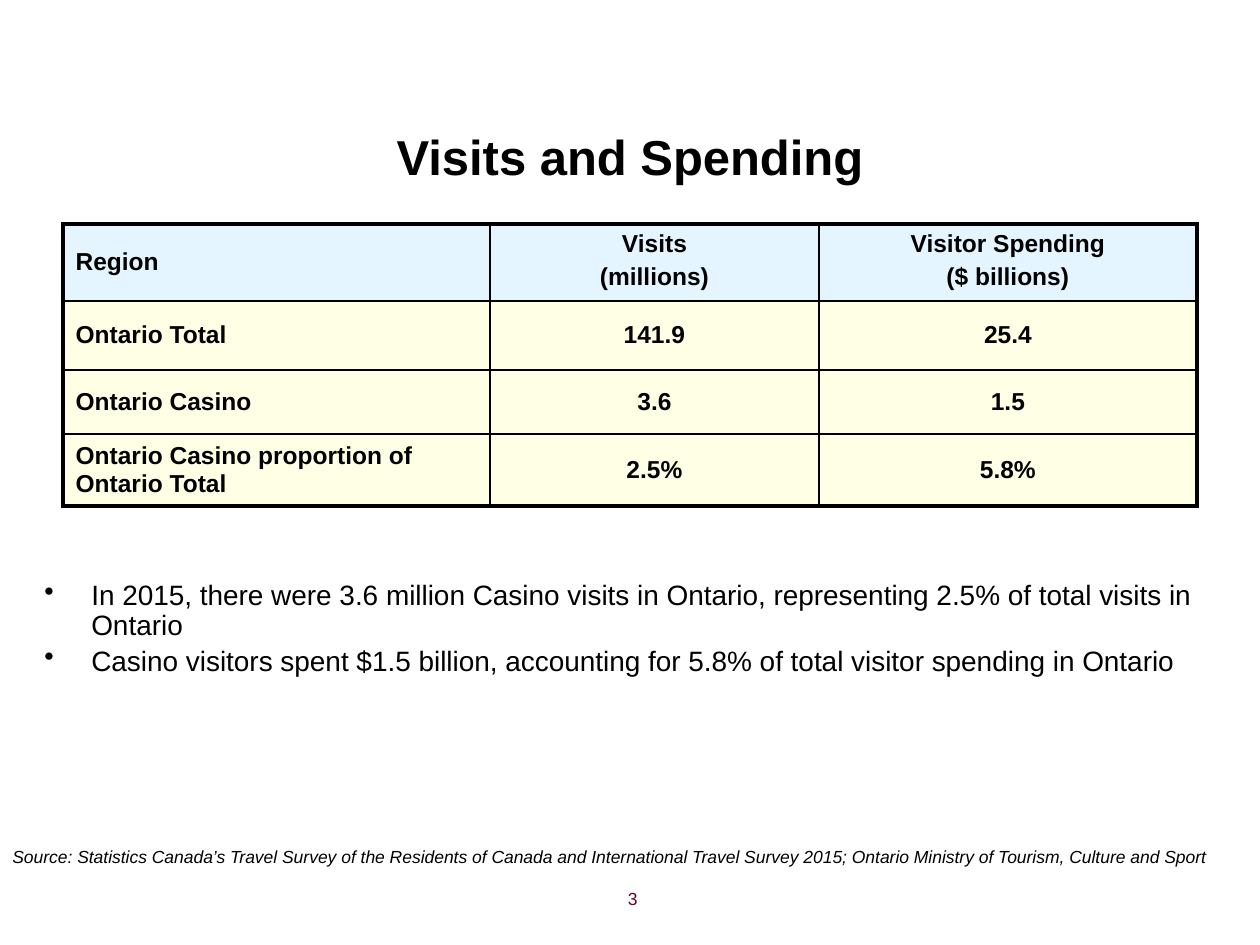
from lxml.etree import SubElement
from pptx import Presentation
from pptx.dml.color import RGBColor
from pptx.enum.text import MSO_ANCHOR, PP_ALIGN
from pptx.oxml import parse_xml
from pptx.oxml.ns import nsdecls, qn
from pptx.util import Pt

PX = 914400 // 126
BLACK = RGBColor(0, 0, 0)
MAROON = RGBColor(0x66, 0x00, 0x33)
HEADER_BLUE = RGBColor(0xCC, 0xEC, 0xFF)
BODY_YELLOW = RGBColor(0xFF, 0xFF, 0xCC)


def write(frame, text, size, color=BLACK, bold=False, italic=False,
          align=PP_ALIGN.LEFT, anchor=MSO_ANCHOR.TOP, gap=0, line=None, bullet=None):
    frame.word_wrap = True
    frame.vertical_anchor = anchor
    for index, words in enumerate(text.split("\n")):
        para = frame.paragraphs[0] if index == 0 else frame.add_paragraph()
        para.alignment = align
        para.space_before = Pt(gap if index else 0)
        if line:
            para.line_spacing = line
        if bullet:
            properties = para._p.get_or_add_pPr()
            properties.set("marL", str(47 * PX))
            properties.set("indent", str(-47 * PX))
            SubElement(properties, qn("a:buChar")).set("char", bullet)
        span = para.add_run()
        span.text = words
        span.font.name = "Arial"
        span.font.size = Pt(size)
        span.font.bold = bold
        span.font.italic = italic
        span.font.color.rgb = color


def paint(cell, color, widths):
    cell.fill.solid()
    cell.fill.fore_color.rgb = color
    properties = cell._tc.get_or_add_tcPr()
    shade = properties.find(".//" + qn("a:srgbClr"))
    SubElement(shade, qn("a:alpha")).set("val", "50000")
    for index, (side, width) in enumerate(zip("LRTB", widths)):
        properties.insert(index, parse_xml(
            f'<a:ln{side} {nsdecls("a")} w="{Pt(width)}"><a:solidFill>'
            f'<a:srgbClr val="{BLACK}"/></a:solidFill></a:ln{side}>'))


deck = Presentation()
deck.slide_width = 1260 * PX
deck.slide_height = 945 * PX
page = deck.slides.add_slide(deck.slide_layouts[5])

title = page.shapes.title
title.left, title.top, title.width, title.height = 63 * PX, 108 * PX, 1134 * PX, 95 * PX
write(title.text_frame, "Visits and Spending", 28, bold=True,
      align=PP_ALIGN.CENTER, anchor=MSO_ANCHOR.MIDDLE)

rows = [
    ("Region", "Visits\n(millions)", "Visitor Spending\n($ billions)"),
    ("Ontario Total", "141.9", "25.4"),
    ("Ontario Casino", "3.6", "1.5"),
    ("Ontario Casino proportion of Ontario Total", "2.5%", "5.8%"),
]
column_widths = [427, 329, 378]
row_heights = [77, 69, 64, 72]
table = page.shapes.add_table(4, 3, 63 * PX, 224 * PX, sum(column_widths) * PX,
                              sum(row_heights) * PX).table
table.horz_banding = False
for column, width in zip(table.columns, column_widths):
    column.width = width * PX
for r, (row, height) in enumerate(zip(rows, row_heights)):
    table.rows[r].height = height * PX
    for c, text in enumerate(row):
        cell = table.cell(r, c)
        is_value = r > 0 and c > 0
        cell.margin_left = cell.margin_right = 0 if is_value else Pt(7.2)
        cell.margin_top = cell.margin_bottom = 0 if is_value else Pt(3.6)
        write(cell.text_frame, text, 14, bold=True, gap=3,
              align=PP_ALIGN.CENTER if c else PP_ALIGN.LEFT)
        cell.vertical_anchor = MSO_ANCHOR.TOP if r == 0 and c else MSO_ANCHOR.MIDDLE
        outer = (c == 0, c == 2, r == 0, r == 3)
        paint(cell, BODY_YELLOW if r else HEADER_BLUE,
              [2.25 if edge else 1 for edge in outer])

findings = (
    "In 2015, there were 3.6 million Casino visits in Ontario, "
    "representing 2.5% of total visits in Ontario\n"
    "Casino visitors spent $1.5 billion, accounting for 5.8% of total "
    "visitor spending in Ontario"
)
source = (
    "Source: Statistics Canada’s Travel Survey of the Residents of Canada and "
    "International Travel Survey 2015; Ontario Ministry of Tourism, Culture and Sport"
)
boxes = [
    ((32, 575, 1197, 233), findings, dict(size=16, gap=3, line=0.9, bullet="•")),
    ((357, 882, 293, 44), "3", dict(size=10, color=MAROON, align=PP_ALIGN.RIGHT)),
    ((0, 840, 1235, 34), source, dict(size=10, italic=True)),
]
for place, text, style in boxes:
    box = page.shapes.add_textbox(*(length * PX for length in place))
    write(box.text_frame, text, **style)

deck.save("out.pptx")
